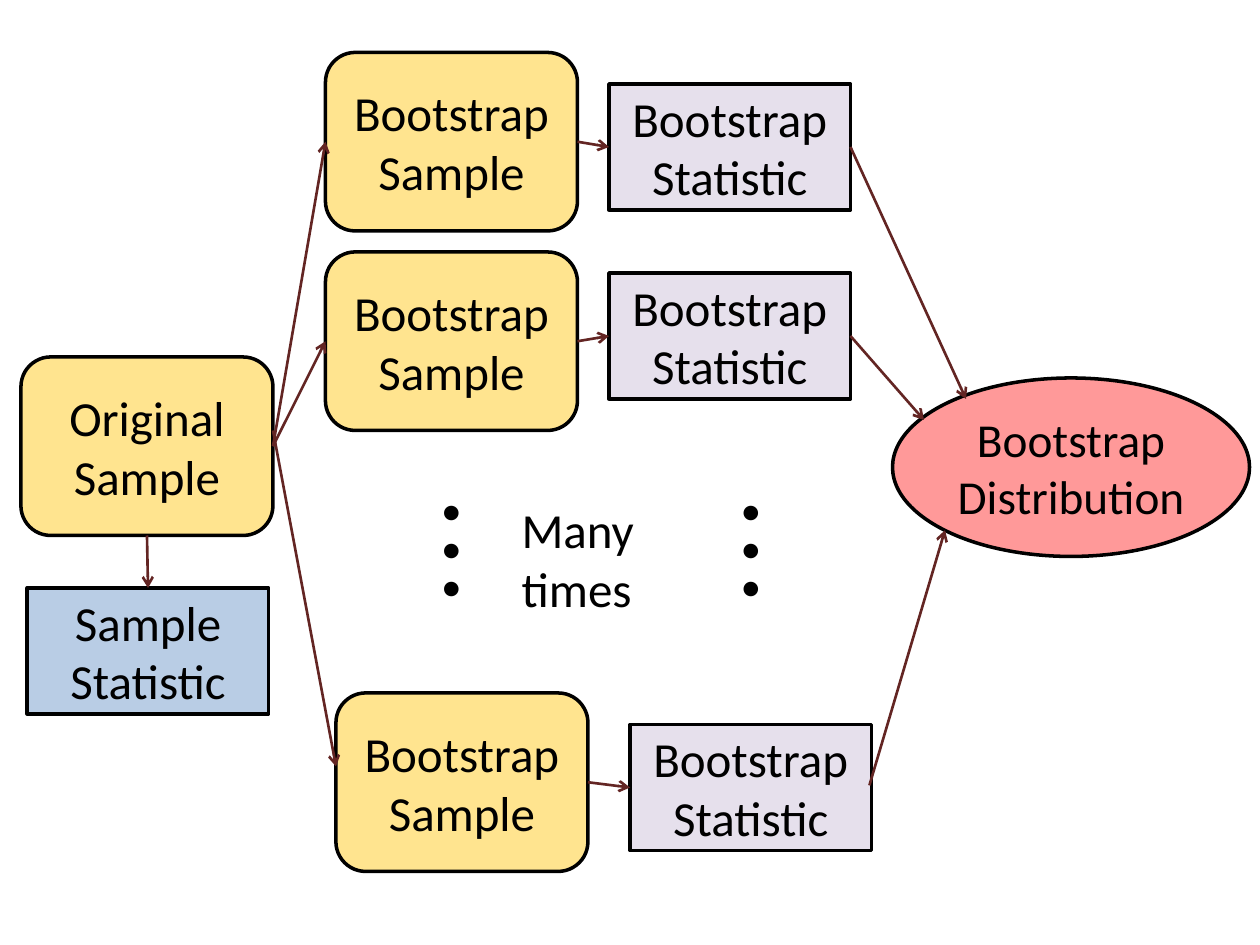
from typing import NamedTuple

import lxml.etree
import pptx
import pptx.dml.color
import pptx.enum.shapes
import pptx.enum.text
import pptx.oxml.ns
import pptx.util

EMU_PER_PX = 7620
BLACK = pptx.dml.color.RGBColor(0x00, 0x00, 0x00)
YELLOW = pptx.dml.color.RGBColor(0xFF, 0xE4, 0x8F)
LAVENDER = pptx.dml.color.RGBColor(0xE6, 0xE0, 0xEC)
BLUE = pptx.dml.color.RGBColor(0xB9, 0xCD, 0xE5)
PINK = pptx.dml.color.RGBColor(0xFF, 0x99, 0x99)
MAROON = pptx.dml.color.RGBColor(0x63, 0x25, 0x23)

MSO_SHAPE = pptx.enum.shapes.MSO_SHAPE
CENTER = pptx.enum.text.PP_ALIGN.CENTER
LEFT = pptx.enum.text.PP_ALIGN.LEFT


class Style(NamedTuple):
    geometry: MSO_SHAPE
    fill: pptx.dml.color.RGBColor
    width: int
    height: int
    font_size: int = 28
    margins: dict[str, int] = {}


class Node(NamedTuple):
    style: Style
    left: int
    top: int
    text: str

    @property
    def left_middle(self) -> tuple[int, int]:
        return self.left, self.top + self.style.height // 2

    @property
    def right_middle(self) -> tuple[int, int]:
        return self.left + self.style.width, self.top + self.style.height // 2


class Label(NamedTuple):
    left: int
    top: int
    width: int
    height: int
    lines: list[str]
    font_size: int
    alignment: pptx.enum.text.PP_ALIGN


class Arrow(NamedTuple):
    start: tuple[int, int]
    end: tuple[int, int]


NO_MARGINS = dict.fromkeys(("margin_left", "margin_top", "margin_right", "margin_bottom"), 0)
SAMPLE = Style(MSO_SHAPE.ROUNDED_RECTANGLE, YELLOW, 240, 170)
STATISTIC = Style(MSO_SHAPE.RECTANGLE, LAVENDER, 230, 120)
SAMPLE_STATISTIC = STATISTIC._replace(fill=BLUE)
DISTRIBUTION = Style(MSO_SHAPE.OVAL, PINK, 340, 170, 27, NO_MARGINS)

ORIGINAL_SAMPLE = Node(SAMPLE, 20, 340, "Original Sample")
BOOTSTRAP_SAMPLES = [
    Node(SAMPLE, left, top, "Bootstrap\nSample")
    for left, top in ((310, 50), (310, 240), (320, 660))
]
BOOTSTRAP_STATISTICS = [
    Node(STATISTIC, left, top, "Bootstrap Statistic")
    for left, top in ((580, 80), (580, 260), (600, 690))
]
NODES = [
    ORIGINAL_SAMPLE,
    *BOOTSTRAP_SAMPLES,
    *BOOTSTRAP_STATISTICS,
    Node(SAMPLE_STATISTIC, 26, 560, "Sample Statistic"),
    Node(DISTRIBUTION, 850, 360, "Bootstrap Distribution"),
]
LABELS = [
    *(Label(left, 462, 150, 157, ["●"] * 3, 18, CENTER) for left in (355, 640)),
    Label(485, 470, 160, 125, ["Many times"], 28, LEFT),
]
ARROWS = [
    *(Arrow(ORIGINAL_SAMPLE.right_middle, sample.left_middle) for sample in BOOTSTRAP_SAMPLES[:2]),
    Arrow((260, 410), (320, 730)),
    Arrow((140, 510), (141, 560)),
    *(
        Arrow(sample.right_middle, statistic.left_middle)
        for sample, statistic in zip(BOOTSTRAP_SAMPLES, BOOTSTRAP_STATISTICS)
    ),
    Arrow(BOOTSTRAP_STATISTICS[0].right_middle, (920, 380)),
    Arrow(BOOTSTRAP_STATISTICS[1].right_middle, (880, 400)),
    Arrow((828, 748), (900, 505)),
]


def px(*lengths: int) -> list[pptx.util.Emu]:
    return [pptx.util.Emu(length * EMU_PER_PX) for length in lengths]


def set_attributes(target, values: dict) -> None:
    for name, value in values.items():
        setattr(target, name, value)


def write_lines(text_frame, lines: list[str], font_size: int, alignment) -> None:
    text_frame.word_wrap = True
    font_format = {"name": "Calibri", "size": pptx.util.Pt(font_size)}
    for index, line in enumerate(lines):
        paragraph = text_frame.add_paragraph() if index else text_frame.paragraphs[0]
        paragraph.text = line
        paragraph.alignment = alignment
        for run in paragraph.runs:
            set_attributes(run.font, font_format)
            run.font.color.rgb = BLACK


def draw_node(slide, node: Node) -> None:
    style = node.style
    shape = slide.shapes.add_shape(
        style.geometry, *px(node.left, node.top, style.width, style.height)
    )
    shape.shadow.inherit = False
    shape.fill.solid()
    shape.fill.fore_color.rgb = style.fill
    shape.line.color.rgb = BLACK
    shape.line.width = pptx.util.Pt(2)
    anchor = {"vertical_anchor": pptx.enum.text.MSO_ANCHOR.MIDDLE}
    set_attributes(shape.text_frame, anchor | style.margins)
    write_lines(shape.text_frame, [node.text], style.font_size, CENTER)


def draw_label(slide, label: Label) -> None:
    text_box = slide.shapes.add_textbox(*px(label.left, label.top, label.width, label.height))
    write_lines(text_box.text_frame, label.lines, label.font_size, label.alignment)


def draw_arrow(slide, arrow: Arrow) -> None:
    connector = slide.shapes.add_connector(
        pptx.enum.shapes.MSO_CONNECTOR.STRAIGHT, *px(*arrow.start, *arrow.end)
    )
    connector.line.color.rgb = MAROON
    connector.line.width = pptx.util.Pt(1.5)
    properties = connector._element.spPr
    line = properties.find(pptx.oxml.ns.qn("a:ln"))
    lxml.etree.SubElement(line, pptx.oxml.ns.qn("a:tailEnd"), type="arrow")
    lxml.etree.SubElement(properties, pptx.oxml.ns.qn("a:effectLst"))


def main() -> None:
    presentation = pptx.Presentation()
    presentation.slide_width, presentation.slide_height = px(1200, 900)
    slide = presentation.slides.add_slide(presentation.slide_layouts[6])
    for node in NODES:
        draw_node(slide, node)
    for label in LABELS:
        draw_label(slide, label)
    for arrow in ARROWS:
        draw_arrow(slide, arrow)
    presentation.save("out.pptx")


if __name__ == "__main__":
    main()
